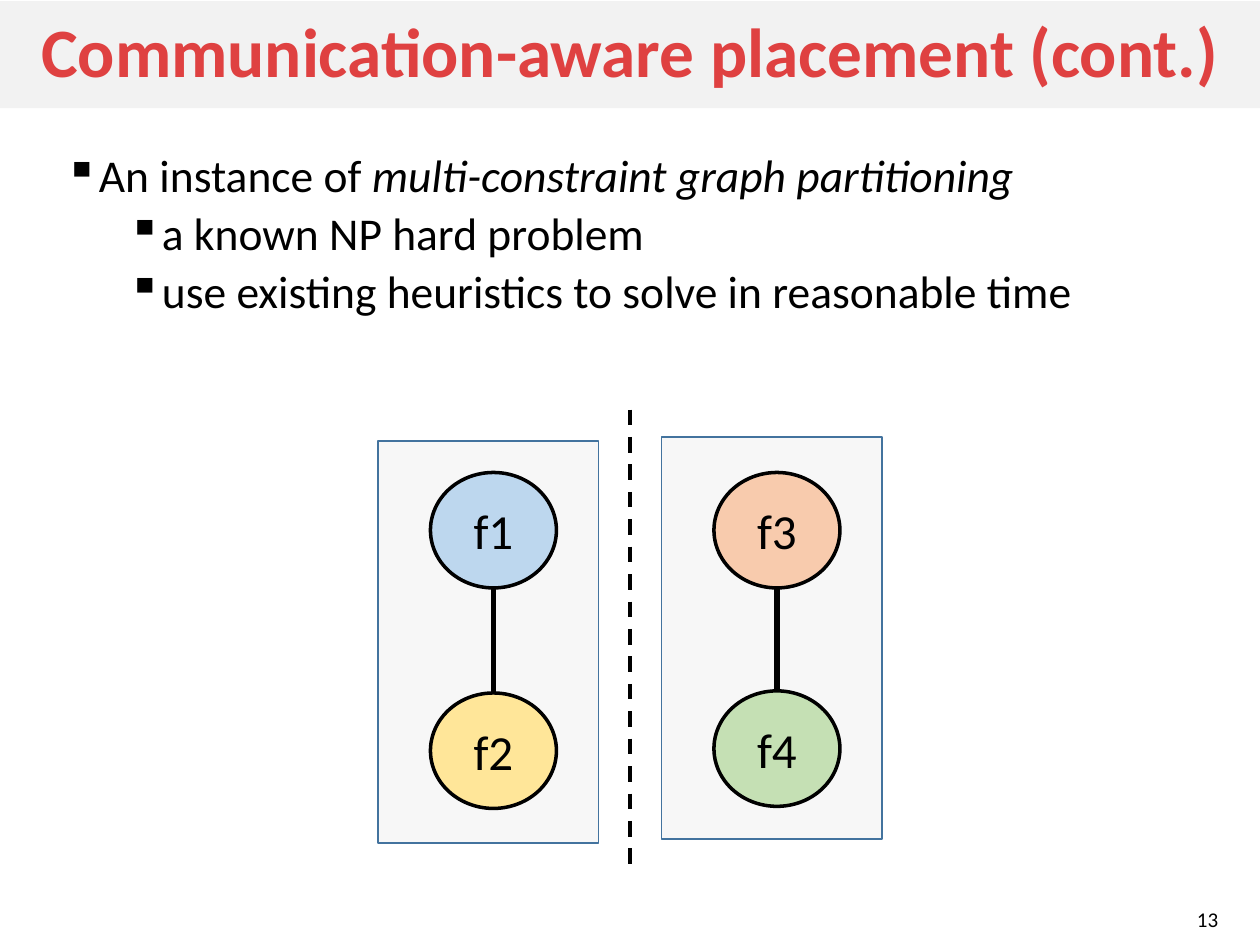
from collections import namedtuple

from lxml import etree
from pptx import Presentation
from pptx.dml.color import RGBColor
from pptx.enum.dml import MSO_LINE
from pptx.enum.shapes import MSO_CONNECTOR, MSO_SHAPE
from pptx.enum.text import MSO_ANCHOR, PP_ALIGN
from pptx.oxml.ns import qn
from pptx.util import Inches, Pt

RECTANGLE, ELLIPSE = MSO_SHAPE.RECTANGLE, MSO_SHAPE.OVAL
STRAIGHT, DASH = MSO_CONNECTOR.STRAIGHT, MSO_LINE.DASH
LEFT, CENTER, RIGHT = PP_ALIGN.LEFT, PP_ALIGN.CENTER, PP_ALIGN.RIGHT
TOP, MIDDLE = MSO_ANCHOR.TOP, MSO_ANCHOR.MIDDLE

COLUMNS, ROWS = 120, 90
WIDTH, HEIGHT = Inches(10), Inches(7.5)
FONT, BLACK = "Calibri", "000000"
Box = namedtuple("Box", "left top width height")


def color(value):
    """Turn a hex string into a colour."""
    return RGBColor.from_string(value)


def across(columns):
    """Give the length of a number of grid columns."""
    return round(WIDTH * columns / COLUMNS)


def down(rows):
    """Give the length of a number of grid rows."""
    return round(HEIGHT * rows / ROWS)


def place(box):
    """Turn a grid box into slide lengths."""
    return across(box.left), down(box.top), across(box.width), down(box.height)


def add_block(page, kind, box, fill, line=None, weight=1, alpha=None):
    """Draw a filled preset shape, outlined if a line colour is given."""
    block = page.shapes.add_shape(kind, *place(box))
    block.shadow.inherit = False
    block.fill.solid()
    block.fill.fore_color.rgb = color(fill)
    if alpha is not None:
        tint = block.fill._xPr.find(qn("a:solidFill"))[0]
        etree.SubElement(tint, qn("a:alpha")).set("val", str(alpha * 1000))
    if line:
        block.line.color.rgb = color(line)
        block.line.width = Pt(weight)
    else:
        block.line.fill.background()
    return block


def add_line(page, start, end, weight, dash=None):
    """Draw a straight black line between two grid points."""
    line = page.shapes.add_connector(
        STRAIGHT, across(start[0]), down(start[1]), across(end[0]), down(end[1]))
    line.line.color.rgb = color(BLACK)
    line.line.width = Pt(weight)
    if dash:
        line.line.dash_style = dash
    etree.SubElement(line._element.spPr, qn("a:effectLst"))


def prepare_frame(shape, anchor):
    """Make a shape's text wrap and anchor it."""
    frame = shape.text_frame
    frame.word_wrap = True
    frame.vertical_anchor = anchor
    return frame


def write(para, text, size, ink=BLACK, bold=False, italic=False, align=LEFT):
    """Append a formatted span to a paragraph."""
    para.alignment = align
    span = para.add_run()
    span.text = text
    span.font.name = FONT
    span.font.size = Pt(size)
    span.font.bold = bold
    span.font.italic = italic
    span.font.color.rgb = color(ink)


def add_bullet(para, level):
    """Give a paragraph a square bullet and its hanging indent."""
    para.level = level
    para.line_spacing = 0.9
    para.space_before = Pt(5 if level else 12)
    properties = para._p.get_or_add_pPr()
    properties.set("marL", str(Inches(0.25 + 0.5 * level)))
    properties.set("indent", str(Inches(-0.25)))
    etree.SubElement(properties, qn("a:buChar")).set("char", "▪")


def add_title(page, box, text):
    """Draw the title band."""
    para = prepare_frame(add_block(page, RECTANGLE, box, "F2F2F2"), MIDDLE).paragraphs[0]
    para.line_spacing = 0.9
    write(para, text, 39.6, ink="DF4141", bold=True, align=CENTER)


def add_points(page, box, points):
    """Write the bulleted list from levels and (text, italic) spans."""
    frame = prepare_frame(page.shapes.add_textbox(*place(box)), TOP)
    for index, (level, spans) in enumerate(points):
        para = frame.add_paragraph() if index else frame.paragraphs[0]
        add_bullet(para, level)
        for text, italic in spans:
            write(para, text, 26, italic=italic)


def add_page_number(page, box, number):
    """Write the slide number."""
    frame = prepare_frame(page.shapes.add_textbox(*place(box)), MIDDLE)
    write(frame.paragraphs[0], number, 12, align=RIGHT)


def add_partition(page, box, node_tops, nodes):
    """Draw a partition holding two linked function nodes."""
    add_block(page, RECTANGLE, box, "EDEDED", line="43739E", alpha=40)
    node_width, node_height = 12, 11
    left = box.left + 5
    middle = left + node_width / 2
    for top, (name, fill) in zip(node_tops, nodes):
        node = add_block(page, ELLIPSE, Box(left, top, node_width, node_height),
                         fill, line=BLACK, weight=2)
        write(prepare_frame(node, MIDDLE).paragraphs[0], name, 28, align=CENTER)
    add_line(page, (middle, node_tops[0] + node_height), (middle, node_tops[1]), 3)


def add_graph(page, box):
    """Draw two partitions on either side of a dashed cut."""
    width, height, inset = 21, 38.3, 3
    center = box.left + box.width / 2
    first = box.top + 6
    add_partition(page, Box(box.left, box.top + 3, width, height), (first, first + 21),
                  (("f1", "BDD7EE"), ("f2", "FFE699")))
    add_partition(page, Box(center + inset, box.top + 2.6, width, height),
                  (first, first + 20.8), (("f3", "F8CBAD"), ("f4", "C5E0B4")))
    add_line(page, (center, box.top), (center, box.top + box.height), 2.25, DASH)


def main():
    """Build and save the slide."""
    deck = Presentation()
    deck.slide_width, deck.slide_height = WIDTH, HEIGHT
    page = deck.slides.add_slide(deck.slide_layouts[6])
    add_title(page, Box(0, 0.1, COLUMNS, 10.2), "Communication-aware placement (cont.)")
    add_points(page, Box(5, 14, 111, 69), (
        (0, (("An instance of ", False), ("multi-constraint graph partitioning", True))),
        (1, (("a known NP hard problem", False),)),
        (1, (("use existing heuristics to solve in reasonable time", False),)),
    ))
    add_graph(page, Box(36, 39, 48, 44))
    add_page_number(page, Box(107.6, 85.7, 9.6, 3.6), "13")
    deck.save("out.pptx")


if __name__ == "__main__":
    main()
